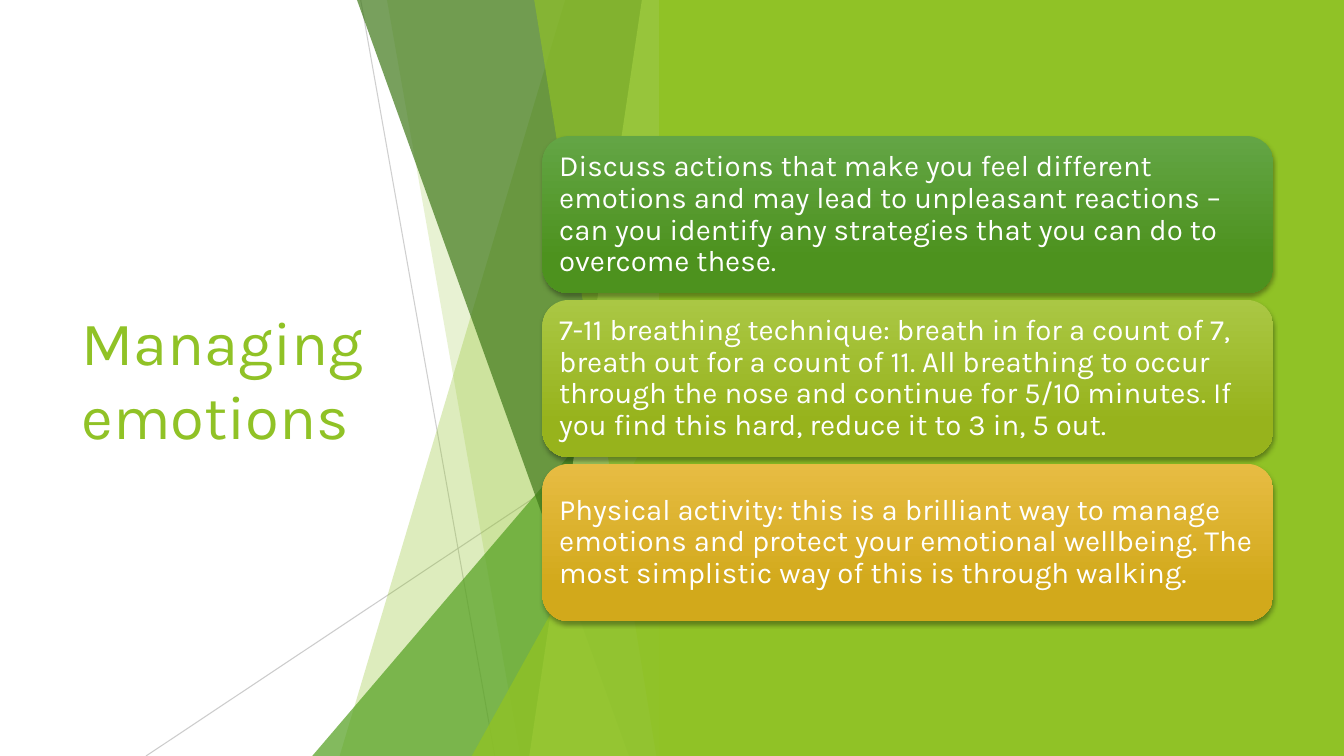
from lxml import etree
from pptx import Presentation
from pptx.dml.color import RGBColor
from pptx.enum.shapes import MSO_CONNECTOR, MSO_SHAPE
from pptx.enum.text import MSO_ANCHOR, MSO_AUTO_SIZE, PP_ALIGN
from pptx.oxml.ns import qn
from pptx.util import Cm, Pt

STRAIGHT = MSO_CONNECTOR.STRAIGHT
RECT, ROUNDED, TRIANGLE = MSO_SHAPE.RECTANGLE, MSO_SHAPE.ROUNDED_RECTANGLE, MSO_SHAPE.ISOSCELES_TRIANGLE
MIDDLE, LEFT, NO_FIT = MSO_ANCHOR.MIDDLE, PP_ALIGN.LEFT, MSO_AUTO_SIZE.NONE

FONT = "Karla"
GREEN, WHITE = "90C226", "FFFFFF"
TITLE = "Managing emotions"
CARDS = [
    ("Discuss actions that make you feel different emotions and may lead to unpleasant reactions – "
     "can you identify any strategies that you can do to overcome these.", "63A545", "4D921E"),
    ("7-11 breathing technique: breath in for a count of 7, breath out for a count of 11. "
     "All breathing to occur through the nose and continue for 5/10 minutes. "
     "If you find this hard, reduce it to 3 in, 5 out.", "AAC744", "97B31C"),
    ("Physical activity: this is a brilliant way to manage emotions and protect your emotional wellbeing. "
     "The most simplistic way of this is through walking.", "E7BC43", "D2A91B"),
]

SLIDE_W, SLIDE_H = 33.87, 19.05
FACET_TOP, FACET_RIGHT = -0.02, 16.92
PANEL_LEFT = 16.61
CARD_LEFT, CARD_TOP, CARD_W, CARD_H, CARD_STEP = 13.67, 3.43, 18.42, 3.96, 4.13

RAYS = [((9.09, 0), (12.47, SLIDE_H), 75), ((FACET_RIGHT, 10.24), (3.68, SLIDE_H), 80)]
FACETS = [
    ("band", 14.25, 8.56, GREEN, 30),
    ("band", 9.75, 13.11, GREEN, 20),
    ("triangle", 8.46, 7.87, "54A021", 72),
    ("band", 8.99, 15.85, "3F7819", 70),
    ("band", 16.18, 13.34, "C0E474", 70),
    ("band", 13.46, 16.54, GREEN, 65),
    ("triangle", 9.98, 11.89, GREEN, 80),
]


def rgb(value):
    return RGBColor.from_string(value)


def set_alpha(sp, percent):
    color = next(sp._element.spPr.iter(qn("a:srgbClr")))
    etree.SubElement(color, qn("a:alpha")).set("val", str(percent * 1000))


def paint(sp, color):
    sp.shadow.inherit = False
    sp.line.fill.background()
    sp.fill.solid()
    sp.fill.fore_color.rgb = rgb(color)


def write(sp, text, size, color):
    tf = sp.text_frame
    tf.text = text
    tf.word_wrap = True
    tf.auto_size = NO_FIT
    tf.vertical_anchor = MIDDLE
    p = tf.paragraphs[0]
    p.alignment = LEFT
    font = p.runs[0].font
    font.name, font.size, font.color.rgb = FONT, Pt(size), rgb(color)
    return tf


def add_ray(shapes, start, end, opacity):
    ray = shapes.add_connector(STRAIGHT, *map(Cm, start + end))
    ray.line.color.rgb = rgb("BFBFBF")
    ray.line.width = Pt(0.75)
    set_alpha(ray, opacity)
    etree.SubElement(ray._element.spPr, qn("a:effectLst"))


def add_band(shapes, top_x, bottom_x):
    builder = shapes.build_freeform(Cm(top_x), Cm(FACET_TOP))
    corners = [(FACET_RIGHT, FACET_TOP), (FACET_RIGHT, SLIDE_H), (bottom_x, SLIDE_H)]
    builder.add_line_segments([(Cm(x), Cm(y)) for x, y in corners], close=True)
    return builder.convert_to_shape()


def add_triangle(shapes, top, left):
    sp = shapes.add_shape(TRIANGLE, Cm(left), Cm(top), Cm(FACET_RIGHT - left), Cm(SLIDE_H - top))
    sp.adjustments[0] = 1
    return sp


def add_card(shapes, index, text, light, dark):
    top = CARD_TOP + index * CARD_STEP
    sp = shapes.add_shape(ROUNDED, Cm(CARD_LEFT), Cm(top), Cm(CARD_W), Cm(CARD_H))
    sp.line.fill.background()
    sp.fill.gradient()
    sp.fill.gradient_angle = 270
    for stop, color, position in zip(sp.fill.gradient_stops, (light, dark), (0, 0.78)):
        stop.color.rgb = rgb(color)
        stop.position = position
    sp.shadow.inherit = False
    effects = sp._element.spPr.find(qn("a:effectLst"))
    shadow = etree.SubElement(effects, qn("a:outerShdw"), blurRad=str(Pt(3)), dist=str(Pt(2)),
                              dir="5400000", rotWithShape="0")
    color = etree.SubElement(shadow, qn("a:srgbClr"), val="000000")
    etree.SubElement(color, qn("a:alpha"), val="35000")
    tf = write(sp, text, 21, WHITE)
    tf.margin_left = tf.margin_right = tf.margin_top = tf.margin_bottom = Cm(0.23)
    tf.paragraphs[0].line_spacing = 0.9


def main():
    prs = Presentation()
    prs.slide_width, prs.slide_height = Cm(SLIDE_W), Cm(SLIDE_H)
    slide = prs.slides.add_slide(prs.slide_layouts[5])
    shapes = slide.shapes

    title = shapes.title
    title.left, title.top, title.width, title.height = Cm(1.8), Cm(3.84), Cm(9.86), Cm(11.38)
    write(title, TITLE, 44, GREEN)

    for ray in RAYS:
        add_ray(shapes, *ray)

    makers = {"band": add_band, "triangle": add_triangle}
    for kind, first, second, color, opacity in FACETS:
        sp = makers[kind](shapes, first, second)
        paint(sp, color)
        set_alpha(sp, opacity)

    panel = shapes.add_shape(RECT, Cm(PANEL_LEFT), 0, Cm(SLIDE_W - PANEL_LEFT), Cm(SLIDE_H))
    paint(panel, GREEN)

    for index, card in enumerate(CARDS):
        add_card(shapes, index, *card)

    prs.save("out.pptx")


if __name__ == "__main__":
    main()
